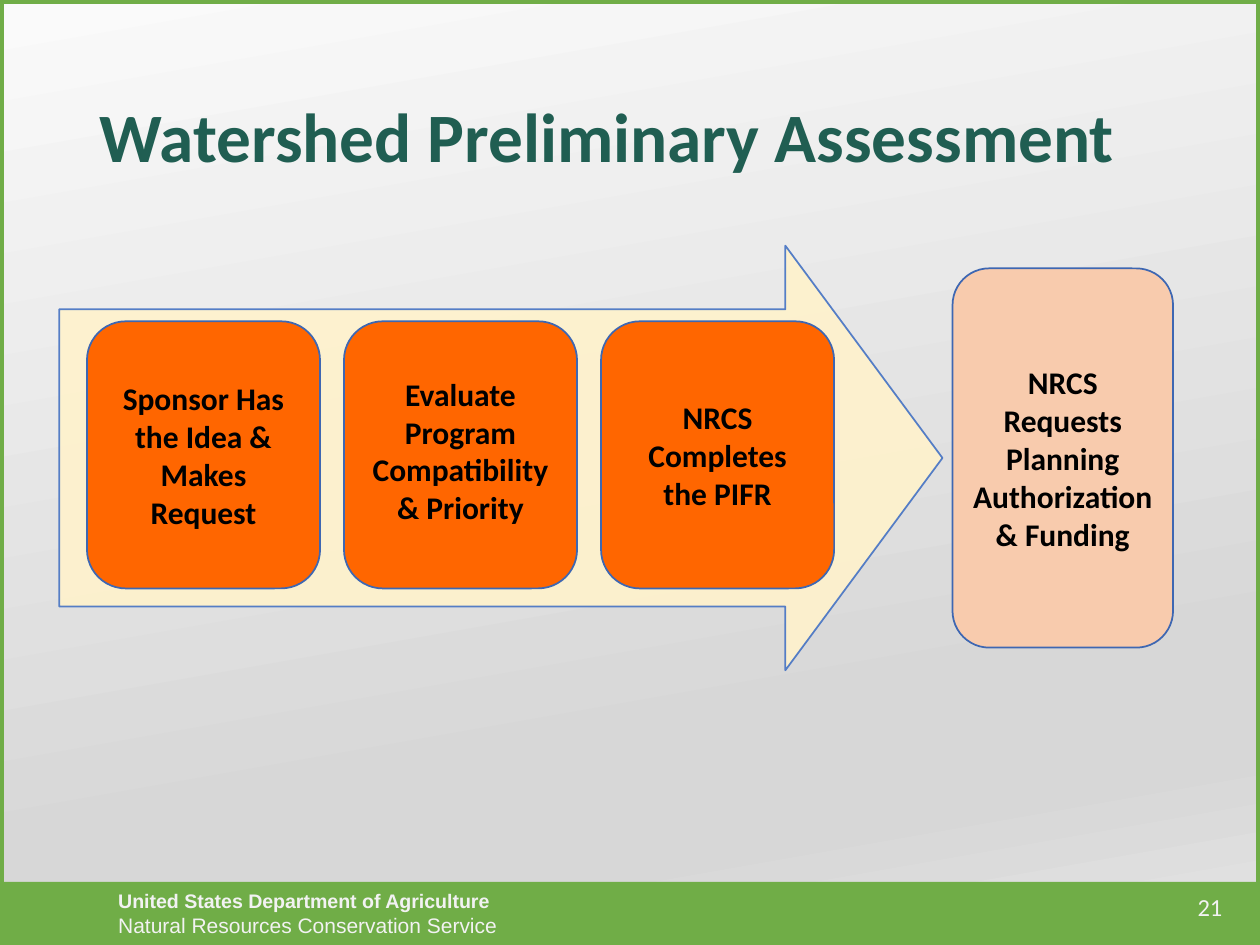
from dataclasses import dataclass

from lxml.etree import SubElement
from pptx import Presentation
from pptx.dml.color import RGBColor
from pptx.enum.shapes import MSO_SHAPE
from pptx.enum.text import MSO_ANCHOR, PP_ALIGN
from pptx.oxml.ns import qn
from pptx.util import Inches, Pt

COLS, ROWS, CELL = 100, 75, 0.1  # grid of square cells, in inches


@dataclass(frozen=True)
class Theme:
    font: str = "Calibri"
    footer_font: str = "Arial"
    green: str = "70AD47"
    title: str = "205E52"
    light: str = "F2F2F2"
    text: str = "000000"
    arrow: str = "FFF2CC"
    arrow_line: str = "4472C4"
    step: str = "FF6600"
    result: str = "F8CBAD"
    box_line: str = "3E67B2"
    title_size: float = 39.6
    box_size: float = 18
    number_size: float = 14
    agency_size: float = 11.2
    service_size: float = 12
    backdrop: tuple = ((0, "FAFAFA"), (74, "D7D7D7"), (83, "D7D7D7"), (100, "E4E4E4"))


@dataclass(frozen=True)
class Box:
    """A rectangle in grid columns and rows."""
    x: float
    y: float
    w: float
    h: float

    def inner(self, dx, dy, w, h):
        return Box(self.x + dx, self.y + dy, w, h)

    def lengths(self):
        return [Inches(v * CELL) for v in (self.x, self.y, self.w, self.h)]


T = Theme()
rgb = RGBColor.from_string


def set_backdrop(slide):
    fill = slide.background.fill
    fill.gradient()
    grad = slide.element.find(".//" + qn("a:gradFill"))
    stops = grad.find(qn("a:gsLst"))
    for gs in list(stops):
        stops.remove(gs)
    for pos, color in T.backdrop:
        gs = SubElement(stops, qn("a:gs"), pos=str(pos * 1000))
        SubElement(gs, qn("a:srgbClr"), val=color)
    lin = grad.find(qn("a:lin"))
    lin.set("ang", str(80 * 60000))
    lin.set("scaled", "0")


def add_outline(slide, kind, box, fill=None, line=None, width=1):
    sp = slide.shapes.add_shape(kind, *box.lengths())
    sp.shadow.inherit = False
    if fill:
        sp.fill.solid()
        sp.fill.fore_color.rgb = rgb(fill)
    else:
        sp.fill.background()
    if line:
        sp.line.color.rgb = rgb(line)
        sp.line.width = Pt(width)
    else:
        sp.line.fill.background()
    return sp


def style(p, size, color, bold=False, align=PP_ALIGN.LEFT, font=T.font):
    p.alignment = align
    p.font.name, p.font.size, p.font.bold = font, Pt(size), bold
    p.font.color.rgb = rgb(color)


def add_line_of_text(slide, box, text, anchor, *look):
    tf = slide.shapes.add_textbox(*box.lengths()).text_frame
    tf.word_wrap = True
    tf.vertical_anchor = anchor
    p = tf.paragraphs[0]
    p.text = text
    style(p, *look)
    return p


def add_frame(slide, box):
    """Footer band with the agency's name and page number, inside a border."""
    band_h = 5
    band = box.inner(0, box.h - band_h, box.w, band_h)
    tf = add_outline(slide, MSO_SHAPE.RECTANGLE, band, T.green).text_frame
    tf.word_wrap = True
    tf.vertical_anchor = MSO_ANCHOR.MIDDLE
    lines = (("United States Department of Agriculture", T.agency_size, True),
             ("Natural Resources Conservation Service", T.service_size, False))
    for i, (text, size, bold) in enumerate(lines):
        p = tf.add_paragraph() if i else tf.paragraphs[0]
        p.text = text
        p._p.get_or_add_pPr().set("marL", str(Inches(0.84)))
        style(p, size, T.light, bold, font=T.footer_font)
    add_outline(slide, MSO_SHAPE.RECTANGLE, box, line=T.green, width=4.5)
    add_line_of_text(slide, band.inner(91.9, 0.3, 6.1, 4), "21", MSO_ANCHOR.TOP,
                     T.number_size, T.light, False, PP_ALIGN.RIGHT)


def add_title(slide, box):
    p = add_line_of_text(slide, box, "Watershed Preliminary Assessment",
                         MSO_ANCHOR.MIDDLE, T.title_size, T.title, True)
    p.line_spacing = 0.9


def add_arrow(slide, box):
    sp = add_outline(slide, MSO_SHAPE.RIGHT_ARROW, box, T.arrow, T.arrow_line)
    sp.adjustments[0], sp.adjustments[1] = 0.7, 0.37
    for clr in sp.element.spPr.iter(qn("a:srgbClr")):
        SubElement(clr, qn("a:alpha"), val="90000")


def add_card(slide, box, fill, paragraphs, side=0.05, top=0.17):
    tf = add_outline(slide, MSO_SHAPE.ROUNDED_RECTANGLE, box, fill, T.box_line).text_frame
    tf.word_wrap = True
    tf.vertical_anchor = MSO_ANCHOR.MIDDLE
    tf.margin_left = tf.margin_right = Inches(side)
    tf.margin_top, tf.margin_bottom = Inches(top), Inches(0.17)
    for i, text in enumerate(paragraphs):
        p = tf.add_paragraph() if i else tf.paragraphs[0]
        p.text = text
        style(p, T.box_size, T.text, True, PP_ALIGN.CENTER)


def add_process(slide, box):
    """Three steps on an arrow that points at the resulting request."""
    add_arrow(slide, box.inner(0, 0, 70.1, box.h))
    steps = ((["Sponsor Has the Idea &", "Makes Request"], 0.18, 0.17),
             (["Evaluate Program Compatibility & Priority"], 0.05, 0.1),
             (["NRCS\nCompletes\nthe PIFR"], 0.05, 0.17))
    w, gap = 18.5, 1.9
    for i, step in enumerate(steps):
        add_card(slide, box.inner(2.2 + i * (w + gap), 6, w, 21.2), T.step, *step)
    add_card(slide, box.inner(box.w - 17.5, 1.8, 17.5, 30.1), T.result,
             ["NRCS Requests Planning Authorization & Funding"])


def main():
    prs = Presentation()
    prs.slide_width, prs.slide_height = Inches(COLS * CELL), Inches(ROWS * CELL)
    slide = prs.slides.add_slide(prs.slide_layouts[6])
    set_backdrop(slide)
    add_frame(slide, Box(0, 0, COLS, ROWS))
    add_title(slide, Box(6.9, 7.1, 86.2, 8.1))
    add_process(slide, Box(4.7, 19.5, 88.4, 33.7))
    prs.save("out.pptx")


if __name__ == "__main__":
    main()
